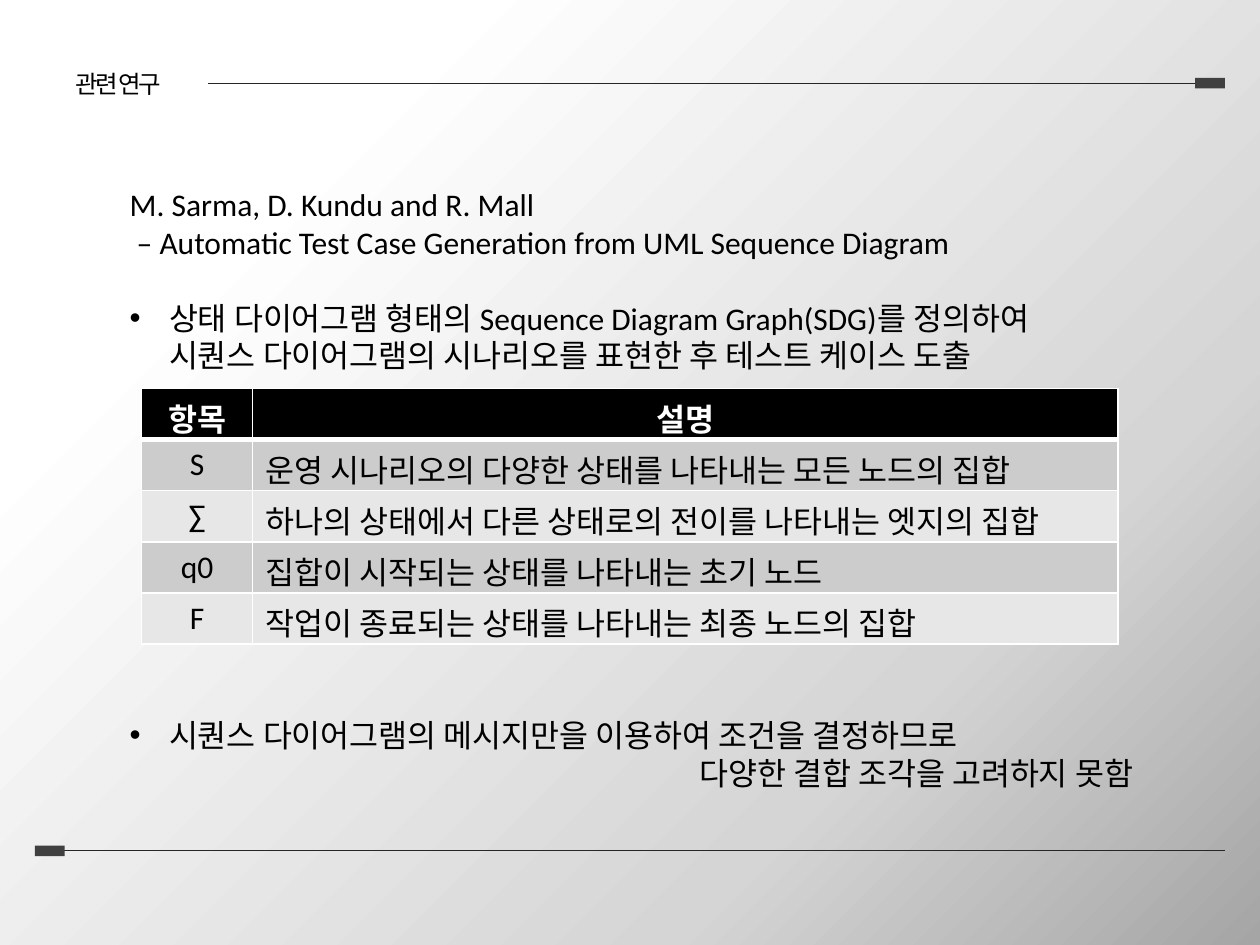
from dataclasses import dataclass

from lxml import etree
from pptx import Presentation
from pptx.dml import color
from pptx.enum import shapes, text
from pptx.oxml import ns, parse_xml
from pptx.util import Pt


@dataclass(frozen=True)
class Theme:
    ink: str = "000000"
    paper: str = "FFFFFF"
    rule: str = "262626"
    tab: str = "404040"
    bands: tuple = ("CCCCCC", "E7E7E7")
    backdrop: tuple = ((0, "FFFFFF"), (21, "FFFFFF"), (73, "D5D5D5"), (100, "A5A5A5"))
    title_font: str = "Arial"
    body_font: str = "Calibri"
    title_size: int = 14
    body_size: int = 18


THEME = Theme()
HANG = 22.5
LINE = 21.7

# text, bulleted, paragraph format
BODY = [
    ("M. Sarma, D. Kundu and R. Mall", False, {}),
    (" – Automatic Test Case Generation from UML Sequence Diagram", False, {}),
    ("상태 다이어그램 형태의 Sequence Diagram Graph(SDG)를 정의하여\v"
     "시퀀스 다이어그램의 시나리오를 표현한 후 테스트 케이스 도출",
     True, {"space_before": Pt(LINE)}),
    ("시퀀스 다이어그램의 메시지만을 이용하여 조건을 결정하므로",
     True, {"space_before": Pt(9 * LINE)}),
    ("다양한 결합 조각을 고려하지 못함", False, {"alignment": text.PP_ALIGN.RIGHT}),
]

STATES = [
    ("항목", "설명"),
    ("S", "운영 시나리오의 다양한 상태를 나타내는 모든 노드의 집합"),
    ("∑", "하나의 상태에서 다른 상태로의 전이를 나타내는 엣지의 집합"),
    ("q0", "집합이 시작되는 상태를 나타내는 초기 노드"),
    ("F", "작업이 종료되는 상태를 나타내는 최종 노드의 집합"),
]


def rgb(value):
    return color.RGBColor.from_string(value)


def apply(target, formats):
    for name, value in formats.items():
        setattr(target, name, value)


def write(paragraph, words, ink=THEME.ink, font=THEME.body_font,
          size=THEME.body_size, bold=False, **formats):
    paragraph.text = words
    apply(paragraph, formats)
    for run in paragraph.runs:
        apply(run.font, {"name": font, "size": Pt(size), "bold": bold})
        run.font.color.rgb = rgb(ink)


def paint_background(slide):
    """Radial gradient that spreads from the top left corner."""
    slide.background.fill.gradient()
    old = slide.element.find(".//" + ns.qn("a:gradFill"))
    stops = "".join(
        f'<a:gs pos="{pos * 1000}"><a:srgbClr val="{value}"/></a:gs>'
        for pos, value in THEME.backdrop)
    old.getparent().replace(old, parse_xml(
        f'<a:gradFill {ns.nsdecls("a")} rotWithShape="1"><a:gsLst>{stops}</a:gsLst>'
        '<a:path path="circle"><a:fillToRect r="100000" b="100000"/></a:path>'
        '</a:gradFill>'))


def add_rule(slide, left, right, y, tab_left):
    """Horizontal line with a small solid tab at one end."""
    line = slide.shapes.add_connector(
        shapes.MSO_CONNECTOR.STRAIGHT, Pt(left), Pt(y), Pt(right), Pt(y))
    line.line.width = Pt(0.5)
    line.line.color.rgb = rgb(THEME.rule)
    etree.SubElement(line.element.spPr, ns.qn("a:effectLst"))
    tab = slide.shapes.add_shape(
        shapes.MSO_SHAPE.RECTANGLE, Pt(tab_left), Pt(y - 3), Pt(17), Pt(6))
    tab.shadow.inherit = False
    tab.fill.solid()
    tab.fill.fore_color.rgb = rgb(THEME.tab)
    tab.line.fill.background()


def add_text_frame(slide, left, top, width, height):
    frame = slide.shapes.add_textbox(Pt(left), Pt(top), Pt(width), Pt(height)).text_frame
    apply(frame, {"word_wrap": True, "auto_size": text.MSO_AUTO_SIZE.SHAPE_TO_FIT_TEXT})
    return frame


def add_title(slide):
    heading = add_text_frame(slide, 6.5, 36, 122.4, 24.5).paragraphs[0]
    write(heading, "관련 연구", font=THEME.title_font, size=THEME.title_size,
          alignment=text.PP_ALIGN.CENTER)
    for run in heading.runs:
        run.font._element.set("spc", "-150")


def add_bullet(paragraph):
    props = paragraph._p.get_or_add_pPr()
    props.set("marL", str(Pt(HANG)))
    props.set("indent", str(Pt(-HANG)))
    etree.SubElement(props, ns.qn("a:buFont")).set("typeface", "Arial")
    etree.SubElement(props, ns.qn("a:buChar")).set("char", "•")


def add_body(slide):
    frame = add_text_frame(slide, 67, 102.2, 587.5, 356.4)
    for index, (words, bulleted, formats) in enumerate(BODY):
        paragraph = frame.add_paragraph() if index else frame.paragraphs[0]
        write(paragraph, words, **formats)
        if bulleted:
            add_bullet(paragraph)


def set_borders(cell, **widths):
    props = cell._tc.get_or_add_tcPr()
    for side in "LRTB":
        props.append(parse_xml(
            f'<a:ln{side} {ns.nsdecls("a")} w="{Pt(widths.get(side, 1))}"><a:solidFill>'
            f'<a:srgbClr val="{THEME.paper}"/></a:solidFill></a:ln{side}>'))


def add_state_table(slide):
    widths, row_height = (63.5, 494.5), 29.2
    table = slide.shapes.add_table(
        len(STATES), len(widths), Pt(80.9), Pt(222),
        Pt(sum(widths)), Pt(row_height * len(STATES))).table
    for column, width in zip(table.columns, widths):
        column.width = Pt(width)
    for r, entries in enumerate(STATES):
        header = r == 0
        edges = {"B": 3} if header else {"T": 3} if r == 1 else {}
        for c, words in enumerate(entries):
            cell = table.cell(r, c)
            set_borders(cell, **edges)
            cell.fill.solid()
            cell.fill.fore_color.rgb = rgb(THEME.ink if header else THEME.bands[(r - 1) % 2])
            centred = header or c == 0
            write(cell.text_frame.paragraphs[0], words, bold=header,
                  ink=THEME.paper if header else THEME.ink,
                  alignment=text.PP_ALIGN.CENTER if centred else text.PP_ALIGN.LEFT)


def main():
    deck = Presentation()
    apply(deck, {"slide_width": Pt(720), "slide_height": Pt(540)})
    slide = deck.slides.add_slide(deck.slide_layouts[6])
    paint_background(slide)
    add_rule(slide, left=20, right=700, y=486.2, tab_left=20)
    add_rule(slide, left=119, right=696, y=47.6, tab_left=683)
    add_title(slide)
    add_body(slide)
    add_state_table(slide)
    deck.save("out.pptx")


if __name__ == "__main__":
    main()
